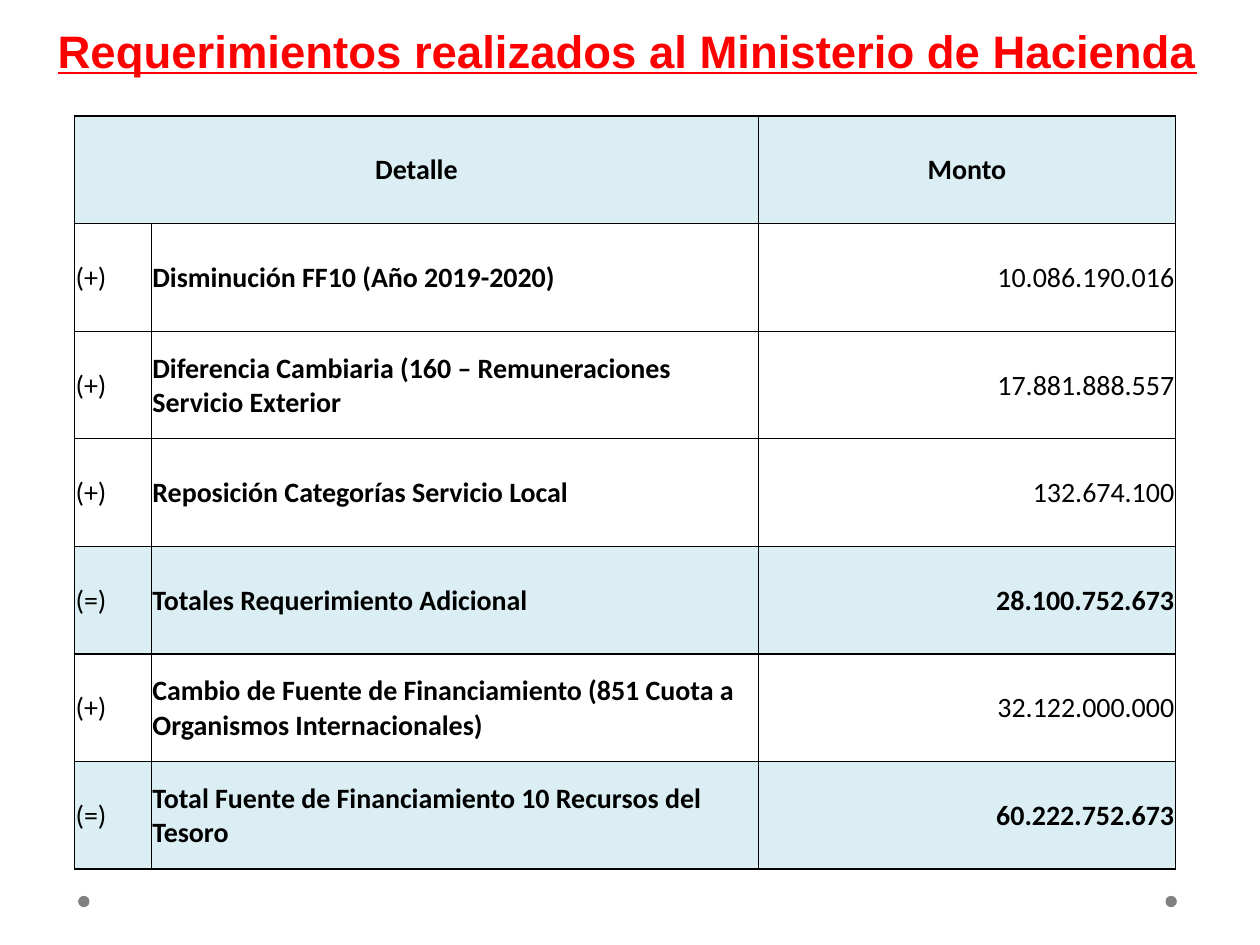
"""Build the slide of requests made to the Ministry of Finance."""
import pptx
import pptx.dml.color
import pptx.enum.shapes
import pptx.enum.text
import pptx.oxml
import pptx.oxml.ns
import pptx.util

Inches = pptx.util.Inches
Pt = pptx.util.Pt
ALIGN = pptx.enum.text.PP_ALIGN


def color(value):
    return pptx.dml.color.RGBColor.from_string(value)


def add_border(cell, side, width):
    cell._tc.get_or_add_tcPr().append(pptx.oxml.parse_xml(
        f'<a:ln{side} {pptx.oxml.ns.nsdecls("a")} w="{Pt(width)}">'
        '<a:solidFill><a:srgbClr val="000000"/></a:solidFill>'
        f'</a:ln{side}>'))


presentation = pptx.Presentation()
presentation.slide_width = Inches(10)
presentation.slide_height = Inches(7.5)
slide = presentation.slides.add_slide(presentation.slide_layouts[6])

for left in (9.25, 0.62):
    dot = slide.shapes.add_shape(
        pptx.enum.shapes.MSO_SHAPE.OVAL,
        Inches(left), Inches(7.11), Inches(0.09), Inches(0.09))
    dot.shadow.inherit = False
    dot.fill.solid()
    dot.fill.fore_color.rgb = color("808080")
    dot.line.fill.background()

title = slide.shapes.add_textbox(Inches(0.08), Inches(0.13), Inches(9.8), Inches(0.94))
title.text_frame.word_wrap = True
title.text_frame.text = "Requerimientos realizados al Ministerio de Hacienda"
heading = title.text_frame.paragraphs[0]
heading.alignment = ALIGN.CENTER
heading_font = heading.runs[0].font
heading_font.name = "Arial"
heading_font.size = Pt(26)
heading_font.bold = True
heading_font.underline = True
heading_font.color.rgb = color("FF0000")

rows = [
    ("Detalle", "", "Monto"),
    ("(+)", "Disminución FF10 (Año 2019-2020)", "10.086.190.016"),
    ("(+)", "Diferencia Cambiaria (160 – Remuneraciones Servicio Exterior", "17.881.888.557"),
    ("(+)", "Reposición Categorías Servicio Local", "132.674.100"),
    ("(=)", "Totales Requerimiento Adicional", "28.100.752.673"),
    ("(+)", "Cambio de Fuente de Financiamiento (851 Cuota a Organismos Internacionales)",
     "32.122.000.000"),
    ("(=)", "Total Fuente de Financiamiento 10 Recursos del Tesoro", "60.222.752.673"),
]
column_widths = (0.61, 4.82, 3.31)
column_alignments = (ALIGN.LEFT, ALIGN.LEFT, ALIGN.RIGHT)
column_lines = (1, 0.5, 0.5, 1)
row_lines = (1, 1, 0.5, 0.5, 1, 1, 1, 1)

requests = slide.shapes.add_table(
    len(rows), len(column_widths),
    Inches(0.59), Inches(0.92), Inches(8.74), Inches(5.98)).table
requests.first_row = False
requests.horz_banding = False
for column, width in zip(requests.columns, column_widths):
    column.width = Inches(width)
requests.cell(0, 0).merge(requests.cell(0, 1))

for r, row in enumerate(rows):
    is_header = r == 0
    is_total = row[0] == "(=)"
    for c, content in enumerate(row):
        cell = requests.cell(r, c)
        add_border(cell, "L", column_lines[c])
        add_border(cell, "R", column_lines[c + 1])
        add_border(cell, "T", row_lines[r])
        add_border(cell, "B", row_lines[r + 1])
        if is_header or is_total:
            cell.fill.solid()
            cell.fill.fore_color.rgb = color("DAEEF3")
        else:
            cell.fill.background()
        cell.vertical_anchor = pptx.enum.text.MSO_ANCHOR.MIDDLE
        cell.margin_left = cell.margin_right = cell.margin_top = Inches(0.01)
        cell.margin_bottom = 0
        if not content:
            continue
        cell.text_frame.text = content
        paragraph = cell.text_frame.paragraphs[0]
        paragraph.alignment = ALIGN.CENTER if is_header else column_alignments[c]
        font = paragraph.runs[0].font
        font.name = "Calibri"
        font.size = Pt(16)
        font.bold = is_header or c == 1 or (is_total and c == 2)
        font.color.rgb = color("000000")

presentation.save("out.pptx")
